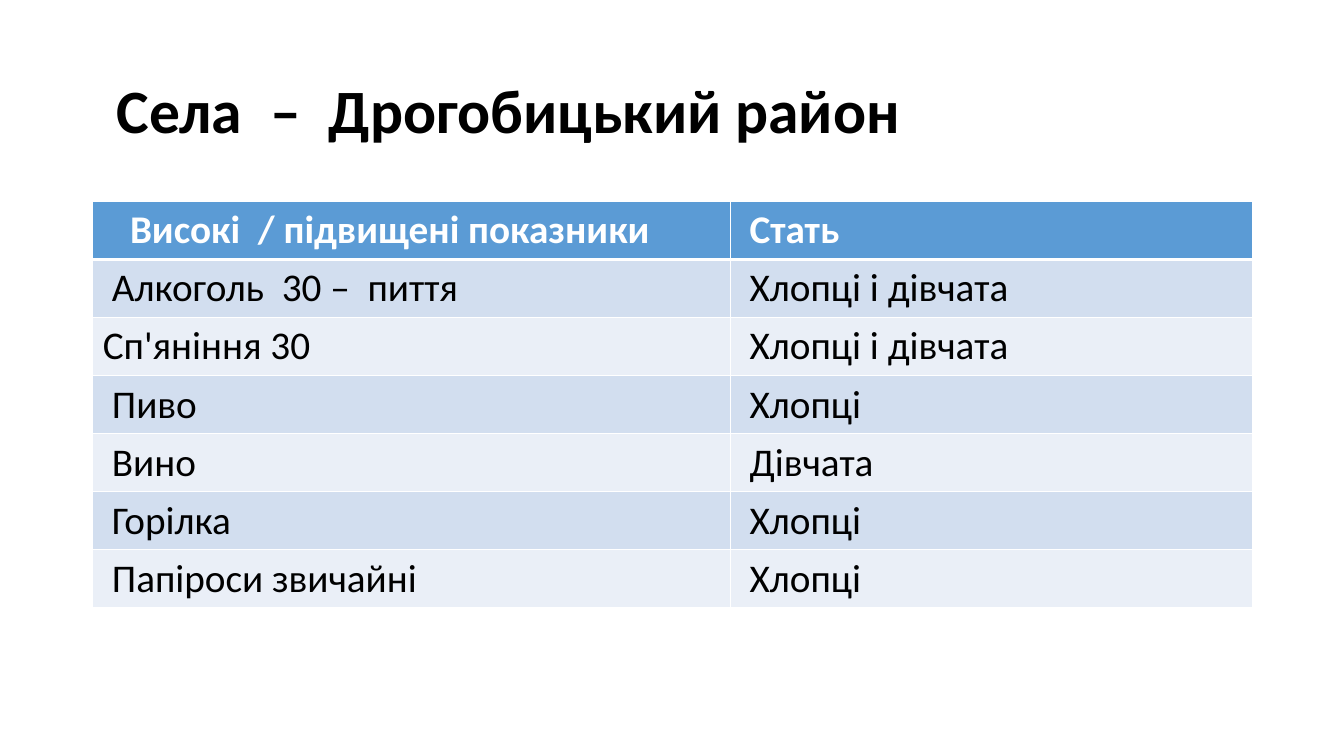
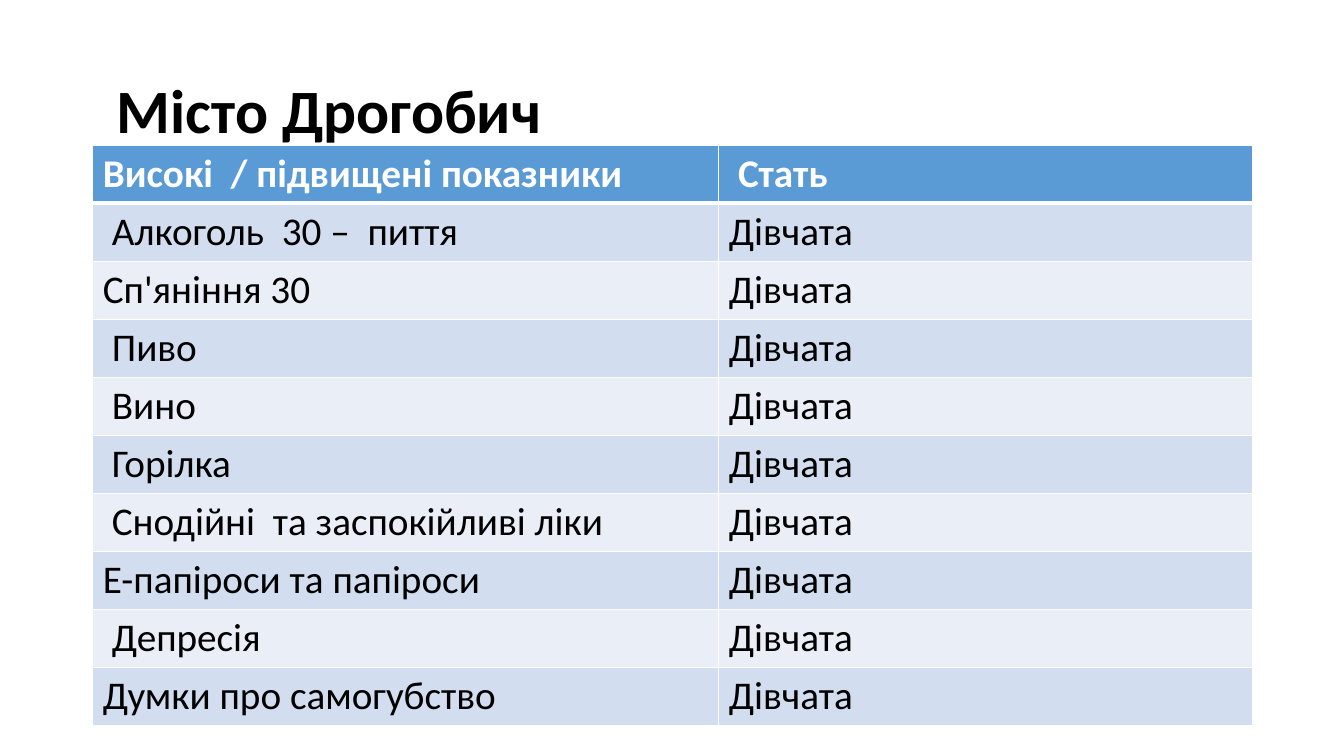
from lxml.etree import SubElement
from pptx import Presentation
from pptx.dml.color import RGBColor
from pptx.enum.text import MSO_ANCHOR, MSO_AUTO_SIZE, PP_ALIGN
from pptx.oxml.ns import qn
from pptx.util import Inches, Pt

WHITE = RGBColor(0xFF, 0xFF, 0xFF)
BLACK = RGBColor(0x00, 0x00, 0x00)
HEADER = RGBColor(0x5B, 0x9B, 0xD5)
BANDS = (RGBColor(0xEA, 0xEF, 0xF7), RGBColor(0xD2, 0xDE, 0xEF))
FONT = "Calibri"
LEFT, WIDTH = 0.92, 11.5
TITLE_TOP, TITLE_HEIGHT = 0.4, 1.45
ROW_HEIGHT = 0.57
CELL_MARGIN, INDENT, TITLE_MARGIN = 0.1, 0.09, 0.24

VILLAGES = [
    (("Високі  / підвищені показники", 3), ("Стать", 1)),
    (("Алкоголь  30 –  пиття", 1), ("Хлопці і дівчата", 1)),
    (("Сп'яніння 30", 0), ("Хлопці і дівчата", 1)),
    (("Пиво", 1), ("Хлопці", 1)),
    (("Вино", 1), ("Дівчата", 1)),
    (("Горілка", 1), ("Хлопці", 1)),
    (("Папіроси звичайні", 1), ("Хлопці", 1)),
]
CITY_MEASURES = [
    ("Алкоголь  30 –  пиття", 1),
    ("Сп'яніння 30", 0),
    ("Пиво", 1),
    ("Вино", 1),
    ("Горілка", 1),
    ("Снодійні  та заспокійливі ліки", 1),
    ("E-папіроси та папіроси", 0),
    ("Депресія", 1),
    ("Думки про самогубство", 0),
]
CITY = [(("Високі  / підвищені показники", 0), ("Стать", 1))]
CITY += [(measure, ("Дівчата", 0)) for measure in CITY_MEASURES]


def write(tf, text, size=28, color=BLACK, bold=False, spacing=1.0):
    """Fill a text frame with one formatted, left-aligned paragraph."""
    p = tf.paragraphs[0]
    p.alignment = PP_ALIGN.LEFT
    p.line_spacing = spacing
    r = p.add_run()
    r.text = text
    r.font.name = FONT
    r.font.size = Pt(size)
    r.font.bold = bold
    r.font.color.rgb = color


def set_borders(cell, **widths):
    """Draw white cell borders with the given widths in points."""
    tc_pr = cell._tc.get_or_add_tcPr()
    for side in "LRTB":
        ln = SubElement(tc_pr, qn(f"a:ln{side}"), w=str(Pt(widths.get(side, 1))))
        fill = SubElement(ln, qn("a:solidFill"))
        SubElement(fill, qn("a:srgbClr"), val=str(WHITE))


def set_up_layout(layout):
    """Place the title once for all slides of the layout."""
    sp = layout.placeholders[0]
    sp.left, sp.top = Inches(LEFT), Inches(TITLE_TOP)
    sp.width, sp.height = Inches(WIDTH), Inches(TITLE_HEIGHT)


def add_title(s, text):
    """Fill the title placeholder."""
    tf = s.shapes.title.text_frame
    tf.auto_size = MSO_AUTO_SIZE.NONE
    tf.vertical_anchor = MSO_ANCHOR.MIDDLE
    tf.margin_left = Inches(TITLE_MARGIN)
    write(tf, text, size=44, bold=True, spacing=0.9)


def add_indicators(s, rows, left, top, width, split):
    """Add a banded two-column table whose first column takes the split share."""
    table = s.shapes.add_table(
        len(rows), 2, Inches(left), Inches(top),
        Inches(width), Inches(ROW_HEIGHT * len(rows))).table
    for col, share in zip(table.columns, (split, 1 - split)):
        col.width = Inches(width * share)
    for i, row in enumerate(rows):
        head = i == 0
        for j, (text, indent) in enumerate(row):
            cell = table.cell(i, j)
            cell.margin_left = Inches(CELL_MARGIN + INDENT * indent)
            set_borders(cell, T=3 if i == 1 else 1, B=3 if head else 1)
            cell.fill.solid()
            cell.fill.fore_color.rgb = HEADER if head else BANDS[i % 2]
            write(cell.text_frame, text, color=WHITE if head else BLACK, bold=head)


def add_table_slide(prs, layout, title, rows, top, split):
    """Add a slide with a title and an indicator table."""
    s = prs.slides.add_slide(layout)
    add_title(s, title)
    add_indicators(s, rows, LEFT, top, WIDTH, split)


def main():
    """Build and save the presentation."""
    prs = Presentation()
    prs.slide_width, prs.slide_height = Inches(13.33), Inches(7.5)
    layout = prs.slide_layouts.get_by_name("Title Only")
    set_up_layout(layout)
    add_table_slide(prs, layout, "Села  –  Дрогобицький район", VILLAGES, 2, 0.55)
    add_table_slide(prs, layout, "Місто Дрогобич", CITY, 1.44, 0.54)
    prs.save("out.pptx")


if __name__ == "__main__":
    main()
